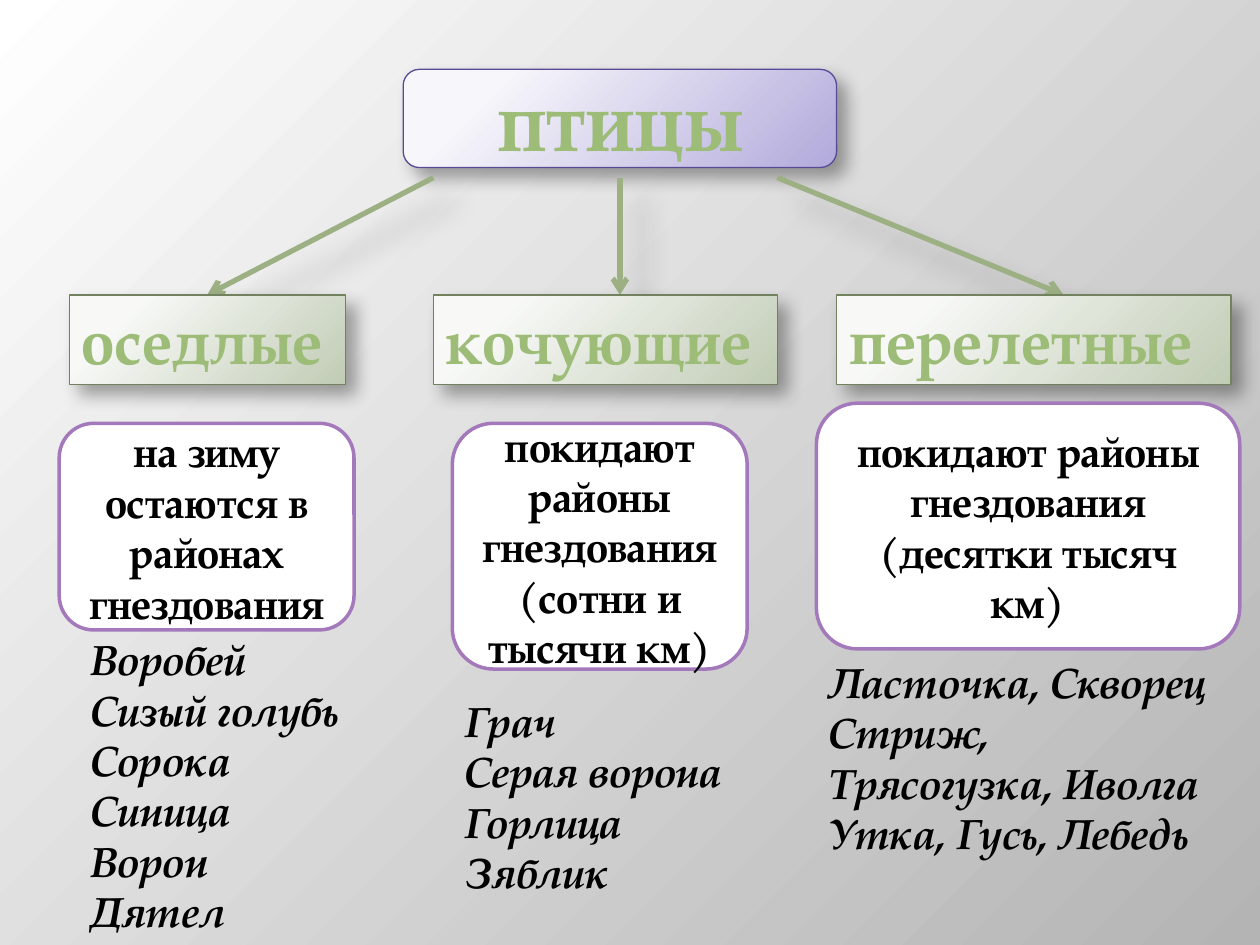
from dataclasses import dataclass

import pptx
import pptx.dml.color
import pptx.enum.shapes
import pptx.enum.text
import pptx.oxml
import pptx.oxml.ns
import pptx.util
from pptx.util import Inches

RGB = pptx.dml.color.RGBColor.from_string
SHAPES = pptx.enum.shapes.MSO_SHAPE
ANCHOR = pptx.enum.text.MSO_ANCHOR
ALIGN = pptx.enum.text.PP_ALIGN
FIT = pptx.enum.text.MSO_AUTO_SIZE.SHAPE_TO_FIT_TEXT


@dataclass(frozen=True)
class Gradient:
    """Two colour stops; radial with a focus given in percent, otherwise vertical."""
    start: int
    start_color: str
    end_color: str
    focus: tuple[int, int] | None = None


@dataclass(frozen=True)
class Shadow:
    opacity: int
    blur: float
    distance: float


@dataclass(frozen=True)
class Theme:
    font: str = "TeX Gyre Pagella"
    title_size: int = 48
    heading_size: int = 36
    body_size: int = 24
    ink: str = "000000"
    paper: str = "FFFFFF"
    arrow: str = "9CB084"
    title_line: str = "5A4A96"
    heading_line: str = "72825E"
    note_line: str = "A379BB"
    background: Gradient = Gradient(0, "FFFFFF", "B4B4B4", (0, 100))
    title_fill: Gradient = Gradient(20, "F7F6FB", "B2AADB", (-15, 115))
    heading_fill: Gradient = Gradient(20, "F8F9F7", "C1CCB5", (-15, 115))
    heading_ink: Gradient = Gradient(25, "9DBC78", "6F8653")
    box_shadow: Shadow = Shadow(35, 10.2, 8)
    arrow_shadow: Shadow = Shadow(26, 15, 18)


@dataclass(frozen=True)
class Box:
    left: float
    top: float
    width: float
    height: float

    def lengths(self) -> list[int]:
        return [Inches(v) for v in (self.left, self.top, self.width, self.height)]


@dataclass(frozen=True)
class BirdGroup:
    heading: str
    heading_box: Box
    arrow_start: float
    arrow_tip: float
    note: list[str]
    note_box: Box
    birds: list[str]
    birds_box: Box


THEME = Theme()
HEADING_TOP, HEADING_HEIGHT = 2.34, 0.71
ARROW_TOP = 1.41
TITLE_BOX = Box(3.2, 0.55, 3.44, 0.78)

GROUPS = [
    BirdGroup(
        "оседлые", Box(0.55, HEADING_TOP, 2.19, HEADING_HEIGHT), 3.44, 1.64,
        ["на зиму остаются в районах гнездования"], Box(0.47, 3.36, 2.34, 1.64),
        ["Воробей", "Сизый голубь", "Сорока", "Синица", "Ворон", "Дятел"],
        Box(0.62, 4.98, 2.34, 2.52)),
    BirdGroup(
        "кочующие", Box(3.44, HEADING_TOP, 2.73, HEADING_HEIGHT), 4.92, 4.92,
        ["покидают районы гнездования", "(сотни и тысячи км)"],
        Box(3.59, 3.36, 2.34, 1.95),
        ["Грач", "Серая ворона", "Горлица", "Зяблик"],
        Box(3.59, 5.47, 2.34, 1.72)),
    BirdGroup(
        "перелетные", Box(6.64, HEADING_TOP, 3.13, HEADING_HEIGHT), 6.17, 8.44,
        ["покидают районы гнездования", "(десятки тысяч км)"],
        Box(6.48, 3.2, 3.36, 1.95),
        ["Ласточка, Скворец", "Стриж,", "Трясогузка, Иволга", "Утка, Гусь, Лебедь"],
        Box(6.48, 5.16, 3.28, 1.72)),
]


def drawing_element(tag: str, attributes: str = "", content: str = ""):
    return pptx.oxml.parse_xml(
        f'<a:{tag} {pptx.oxml.ns.nsdecls("a")} {attributes}>{content}</a:{tag}>')


def apply_fill(owner, fill, paint: str | Gradient) -> None:
    """Fill with a colour, or swap the solid fill inside owner for a gradient."""
    fill.solid()
    if isinstance(paint, str):
        fill.fore_color.rgb = RGB(paint)
        return
    stops = "".join(
        f'<a:gs pos="{position * 1000}"><a:srgbClr val="{color}"/></a:gs>'
        for position, color in ((paint.start, paint.start_color), (100, paint.end_color)))
    if paint.focus:
        near, far = (value * 1000 for value in paint.focus)
        direction = (f'<a:path path="circle"><a:fillToRect l="{near}" t="{near}" '
                     f'r="{far}" b="{far}"/></a:path>')
    else:
        direction = '<a:lin ang="5400000" scaled="0"/>'
    gradient = drawing_element(
        "gradFill", 'rotWithShape="1"', f"<a:gsLst>{stops}</a:gsLst>{direction}")
    owner.replace(owner.find(pptx.oxml.ns.qn("a:solidFill")), gradient)


def add_shadow(properties, shadow: Shadow) -> None:
    for empty in properties.findall(pptx.oxml.ns.qn("a:effectLst")):
        properties.remove(empty)
    blur, distance = pptx.util.Pt(shadow.blur), pptx.util.Pt(shadow.distance)
    properties.append(drawing_element("effectLst", content=(
        f'<a:outerShdw blurRad="{blur}" dist="{distance}" dir="2700000" '
        f'algn="tl" rotWithShape="0"><a:srgbClr val="000000">'
        f'<a:alpha val="{shadow.opacity * 1000}"/></a:srgbClr></a:outerShdw>')))


def write_text(shape, lines: list[str], *, size: int, paint: str | Gradient = THEME.ink,
               italic: bool = False, spacing: float = 0, align=ALIGN.LEFT,
               anchor=ANCHOR.TOP, grow: bool = False) -> None:
    frame = shape.text_frame
    frame.word_wrap = True
    frame.vertical_anchor = anchor
    if grow:
        frame.auto_size = FIT
    for index, line in enumerate(lines):
        paragraph = frame.add_paragraph() if index else frame.paragraphs[0]
        paragraph.alignment = align
        run = paragraph.add_run()
        run.text = line
        font = run.font
        font.name, font.size = THEME.font, pptx.util.Pt(size)
        font.bold, font.italic = True, italic
        properties = run._r.get_or_add_rPr()
        if spacing:
            properties.set("spc", str(round(spacing * 100)))
        apply_fill(properties, font.fill, paint)


def add_box(slide, kind, box: Box, paint: str | Gradient, line: str,
            line_width: float, shadow: Shadow | None = None):
    shape = slide.shapes.add_shape(kind, *box.lengths())
    shape.shadow.inherit = False
    apply_fill(shape.element.spPr, shape.fill, paint)
    shape.line.color.rgb = RGB(line)
    shape.line.width = pptx.util.Pt(line_width)
    if shadow:
        add_shadow(shape.element.spPr, shadow)
    return shape


def add_arrow(slide, group: BirdGroup):
    arrow = slide.shapes.add_connector(
        pptx.enum.shapes.MSO_CONNECTOR.STRAIGHT, Inches(group.arrow_start),
        Inches(ARROW_TOP), Inches(group.arrow_tip), Inches(HEADING_TOP))
    arrow.line.color.rgb = RGB(THEME.arrow)
    arrow.line.width = pptx.util.Pt(3)
    arrow.line._get_or_add_ln().append(drawing_element("tailEnd", 'type="arrow"'))
    add_shadow(arrow.element.spPr, THEME.arrow_shadow)
    return arrow


def add_heading(slide, group: BirdGroup, arrow) -> None:
    box = group.heading_box
    heading = add_box(slide, SHAPES.RECTANGLE, box, THEME.heading_fill,
                      THEME.heading_line, 0.75, THEME.box_shadow)
    write_text(heading, [group.heading], size=THEME.heading_size,
               paint=THEME.heading_ink, spacing=0.5, grow=True)
    if abs(box.left + box.width / 2 - group.arrow_tip) < 0.02:
        arrow.end_connect(heading, 0)


def main() -> None:
    deck = pptx.Presentation()
    deck.slide_width, deck.slide_height = Inches(10), Inches(7.5)
    slide = deck.slides.add_slide(deck.slide_layouts[6])
    background = slide.background.fill
    background.solid()
    apply_fill(slide.element.xpath(".//p:bgPr")[0], background, THEME.background)

    title = add_box(slide, SHAPES.ROUNDED_RECTANGLE, TITLE_BOX, THEME.title_fill,
                    THEME.title_line, 0.75, THEME.box_shadow)
    write_text(title, ["птицы"], size=THEME.title_size, paint=THEME.heading_ink,
               spacing=0.5, align=ALIGN.CENTER, anchor=ANCHOR.MIDDLE)
    arrows = [add_arrow(slide, group) for group in GROUPS]
    for group, arrow in zip(GROUPS, arrows):
        add_heading(slide, group, arrow)
    for group in GROUPS:
        birds = slide.shapes.add_textbox(*group.birds_box.lengths())
        write_text(birds, group.birds, size=THEME.body_size, italic=True, grow=True)
    for group in GROUPS:
        note = add_box(slide, SHAPES.ROUNDED_RECTANGLE, group.note_box, THEME.paper,
                       THEME.note_line, 2)
        write_text(note, group.note, size=THEME.body_size, align=ALIGN.CENTER,
                   anchor=ANCHOR.MIDDLE)
    deck.save("out.pptx")


if __name__ == "__main__":
    main()
